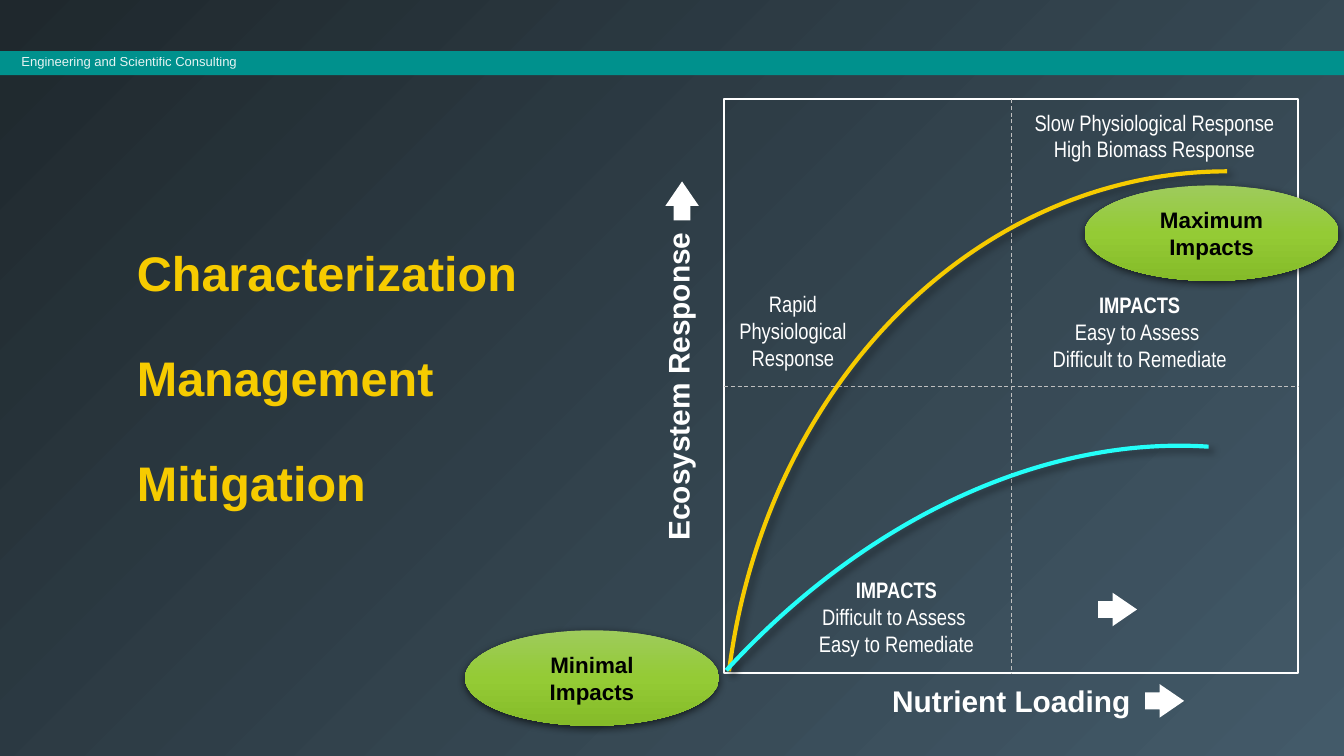
import copy

import pptx
import pptx.util
import pptx.dml.color
import pptx.enum.dml
import pptx.enum.shapes
import pptx.enum.text
import pptx.oxml
import pptx.oxml.ns
from pptx.util import Inches

SHAPE = pptx.enum.shapes.MSO_SHAPE
ALIGN = pptx.enum.text.PP_ALIGN
ANCHOR = pptx.enum.text.MSO_ANCHOR
qn = pptx.oxml.ns.qn

WHITE = "FFFFFF"
YELLOW = "F6CB00"
CYAN = "24FFF9"
PLOT_LEFT, PLOT_TOP, PLOT_SIZE = 5.39, 0.74, 4.27
LABEL = {"size": 12, "font": "Arial Narrow"}


def rgb(color):
    return pptx.dml.color.RGBColor.from_string(color)


def set_gradient(fill, element, stops, clockwise):
    fill.gradient()
    fill.gradient_angle = 360 - clockwise
    stop_list = next(element.iter(qn("a:gsLst")))
    while len(stop_list) < len(stops):
        stop_list.append(copy.deepcopy(stop_list[0]))
    for stop, (position, color) in zip(fill.gradient_stops, stops):
        stop.position = position
        stop.color.rgb = rgb(color)


def add_shadow(shape, opacity, blur, distance, angle):
    effects = shape._element.spPr.find(qn("a:effectLst"))
    effects.append(pptx.oxml.parse_xml(
        f'<a:outerShdw {pptx.oxml.ns.nsdecls("a")} blurRad="{pptx.util.Pt(blur)}" '
        f'dist="{pptx.util.Pt(distance)}" dir="{angle * 60000}" rotWithShape="0">'
        f'<a:srgbClr val="000000"><a:alpha val="{opacity * 1000}"/></a:srgbClr>'
        '</a:outerShdw>'))


def write_text(frame, paragraphs, size=12, font="Arial", color=WHITE, bold=False,
               heading=False, align=ALIGN.CENTER, gap=0, spacing=None, opacity=None):
    """Write paragraphs, with line breaks at newlines; heading makes the first bold."""
    frame.word_wrap = True
    for index, text in enumerate(paragraphs):
        paragraph = frame.add_paragraph() if index else frame.paragraphs[0]
        paragraph.alignment = align
        if spacing:
            paragraph.line_spacing = spacing
        if index and gap:
            paragraph.space_before = pptx.util.Pt(gap)
        for line_number, line in enumerate(text.split("\n")):
            if line_number:
                paragraph.add_line_break()
            run = paragraph.add_run()
            run.text = line
            run.font.size = pptx.util.Pt(size)
            run.font.name = font
            run.font.bold = bold or (heading and index == 0)
            run.font.color.rgb = rgb(color)
            if opacity:
                rgb_element = next(run._r.iter(qn("a:srgbClr")))
                rgb_element.append(
                    rgb_element.makeelement(qn("a:alpha"), {"val": str(opacity * 1000)}))


def add_text(slide, box, paragraphs, rotation=0, anchor=ANCHOR.TOP, inset=0.1,
             **text_format):
    label = slide.shapes.add_textbox(*map(Inches, box))
    label.rotation = rotation
    label.text_frame.vertical_anchor = anchor
    label.text_frame.margin_left = Inches(inset)
    write_text(label.text_frame, paragraphs, **text_format)


def add_shape(slide, kind, box, fill=None, line=None, width=1, rotation=0, adjust=()):
    shape = slide.shapes.add_shape(kind, *map(Inches, box))
    shape.shadow.inherit = False
    shape.rotation = rotation
    for index, value in enumerate(adjust):
        shape.adjustments[index] = value
    if fill:
        shape.fill.solid()
        shape.fill.fore_color.rgb = rgb(fill)
    else:
        shape.fill.background()
    if line:
        shape.line.color.rgb = rgb(line)
        shape.line.width = pptx.util.Pt(width)
    else:
        shape.line.fill.background()
    return shape


def add_midline(slide, plot, start, end):
    midline = slide.shapes.add_connector(
        pptx.enum.shapes.MSO_CONNECTOR.STRAIGHT, 0, 0, 0, 0)
    midline.begin_connect(plot, start)
    midline.end_connect(plot, end)
    midline.line.color.rgb = rgb("BFBFBF")
    midline.line.width = pptx.util.Pt(0.5)
    midline.line.dash_style = pptx.enum.dml.MSO_LINE.DASH
    properties = midline._element.spPr
    properties.append(properties.makeelement(qn("a:effectLst"), {}))


def add_curve(slide, box, color, rotation, adjust):
    curve = add_shape(slide, SHAPE.ARC, box, line=color, width=2.25,
                      rotation=rotation, adjust=adjust)
    add_shadow(curve, opacity=40, blur=4, distance=3, angle=45)


def add_impact(slide, left, top, text):
    oval = add_shape(slide, SHAPE.OVAL, (left, top, 1.89, 0.71))
    set_gradient(oval.fill, oval._element,
                 [(0, "9ECB5C"), (0.5, "94CB35"), (1, "85BB29")], 90)
    add_shadow(oval, opacity=63, blur=4.5, distance=1.5, angle=90)
    oval.text_frame.vertical_anchor = ANCHOR.MIDDLE
    write_text(oval.text_frame, [text], color="000000", bold=True)


def add_arrow(slide, left, top, rotation=0):
    add_shape(slide, SHAPE.RIGHT_ARROW, (left, top, 0.29, 0.25), fill=WHITE,
              rotation=rotation, adjust=(0.5, 0.73))


def main():
    deck = pptx.Presentation()
    deck.slide_width = Inches(10)
    deck.slide_height = deck.slide_width * 9 // 16
    slide = deck.slides.add_slide(deck.slide_layouts[6])
    set_gradient(slide.background.fill, slide._element,
                 [(0, "1F282D"), (1, "435A69")], 45)

    # Header band and topics
    add_shape(slide, SHAPE.RECTANGLE, (0, 0.38, 10, 0.18), fill="00918D")
    add_text(slide, (0.16, 0.35, 2.71, 0.22), ["Engineering and Scientific Consulting"],
             size=7, align=ALIGN.LEFT, inset=0, opacity=90)
    add_text(slide, (0.92, 0.84, 3.34, 3.98),
             ["Characterization", "Management", "Mitigation"], anchor=ANCHOR.MIDDLE,
             size=26, color=YELLOW, bold=True, align=ALIGN.LEFT, spacing=0.9, gap=28.2)

    # Plot frame, quadrant lines and axis titles
    plot = add_shape(slide, SHAPE.RECTANGLE,
                     (PLOT_LEFT, PLOT_TOP, PLOT_SIZE, PLOT_SIZE), line=WHITE)
    add_midline(slide, plot, 0, 2)
    add_midline(slide, plot, 1, 3)
    add_text(slide, (3.14, 2.69, 3.81, 0.37), ["Ecosystem Response"],
             rotation=270, size=16, bold=True)
    add_text(slide, (5.62, 5.03, 3.81, 0.37), ["Nutrient Loading"], size=16, bold=True)

    # Response curves
    add_curve(slide, (4.78, 1.88, 8.7, 7.49), YELLOW, 270, (167.79, 0))
    add_curve(slide, (2.94, 4.22, 9.69, 7.3), CYAN, 301.3, (173.49, 206.15))

    # Quadrant labels
    add_text(slide, (5.33, 2.11, 1.14, 0.71), ["Rapid Physiological Response"], **LABEL)
    add_text(slide, (7.52, 0.76, 2.14, 0.5),
             ["Slow Physiological Response", "High Biomass Response"], **LABEL)
    add_text(slide, (7.41, 2.12, 2.14, 0.71),
             ["IMPACTS", "Easy to Assess \nDifficult to Remediate"],
             heading=True, **LABEL)
    add_text(slide, (5.6, 4.24, 2.14, 0.71),
             ["IMPACTS", "Difficult to Assess \nEasy to Remediate"],
             heading=True, **LABEL)

    # Impact ovals and arrows
    add_impact(slide, 3.46, 4.69, "Minimal Impacts")
    add_arrow(slide, 4.93, 1.37, rotation=270)
    add_arrow(slide, 8.17, 4.41)
    add_arrow(slide, 8.52, 5.09)
    add_impact(slide, 8.07, 1.38, "Maximum Impacts")

    deck.save("out.pptx")


if __name__ == "__main__":
    main()
